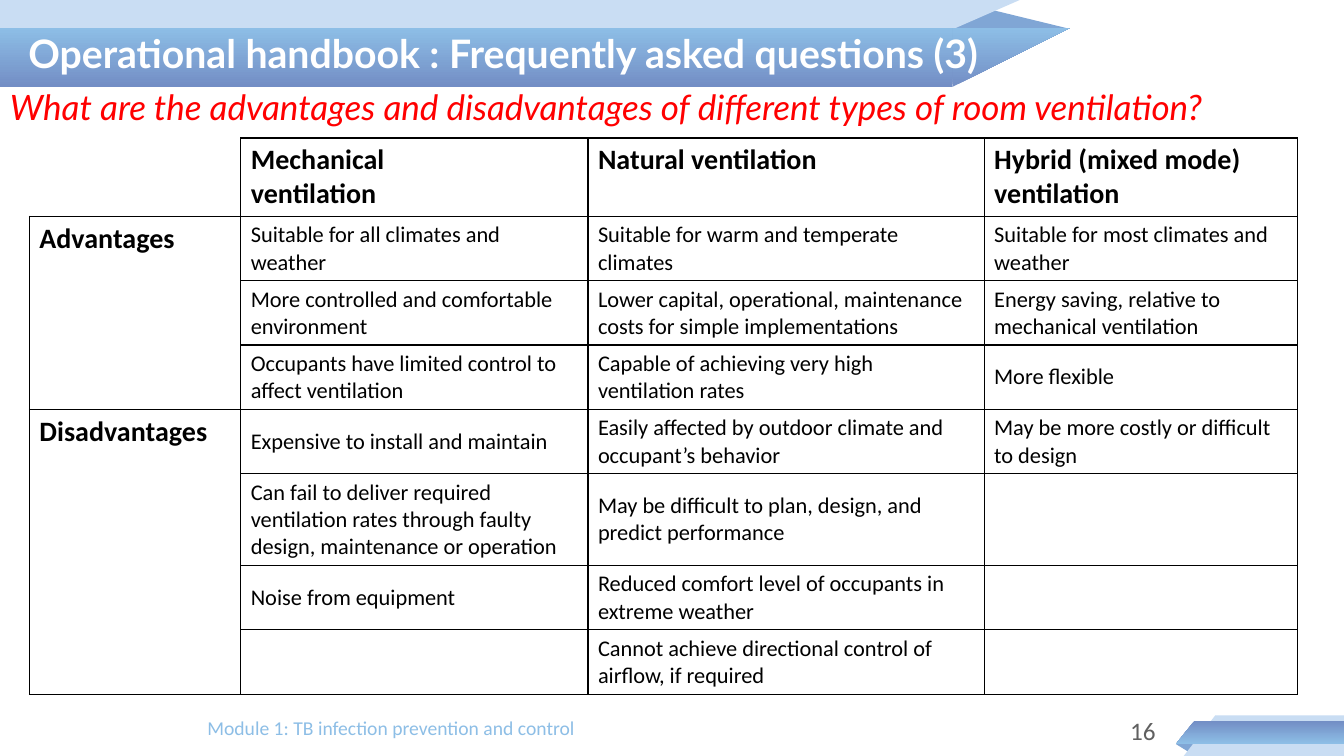
from dataclasses import dataclass

from pptx import Presentation
from pptx import util as u
from pptx.dml.color import RGBColor
from pptx.enum import shapes, text
from pptx.oxml import parse_xml
from pptx.oxml.ns import nsdecls

Pt = u.Pt
Preset = shapes.MSO_SHAPE
Anchor = text.MSO_ANCHOR
Align = text.PP_ALIGN


@dataclass(frozen=True)
class Theme:
    heading_font: str = "Lato"
    body_font: str = "Calibri"
    white: str = "FFFFFF"
    black: str = "000000"
    question: str = "FF0000"
    pale: str = "C9DDF3"
    fold: str = "80A6D5"
    band_dark: str = "738EC5"
    band_light: str = "8DBEE6"
    number: str = "606060"
    title_size: float = 28
    question_size: float = 25
    header_size: float = 20
    cell_size: float = 16
    footer_size: float = 14
    number_size: float = 18
    border: float = 1


class SlideBuilder:
    def __init__(self, slide, theme):
        self.slide = slide
        self.theme = theme

    def style(self, paragraph, size, color, family, bold=False, italic=False):
        font = paragraph.font
        font.name, font.size = family, Pt(size)
        font.bold, font.italic = bold, italic
        font.color.rgb = RGBColor.from_string(color)

    def title(self, wording, left, top, width, height):
        heading = self.slide.shapes.title
        self.slide.shapes._spTree.append(heading._element)
        heading.left, heading.top = Pt(left), Pt(top)
        heading.width, heading.height = Pt(width), Pt(height)
        frame = heading.text_frame
        frame.text = wording
        frame.vertical_anchor = Anchor.MIDDLE
        frame.paragraphs[0].alignment = Align.LEFT
        self.style(frame.paragraphs[0], self.theme.title_size,
                   self.theme.white, self.theme.heading_font, bold=True)

    def label(self, wording, left, top, width, height, size, color, family,
              align=Align.LEFT, italic=False):
        box = self.slide.shapes.add_textbox(Pt(left), Pt(top), Pt(width), Pt(height))
        frame = box.text_frame
        frame.word_wrap = True
        frame.text = wording
        frame.paragraphs[0].alignment = align
        self.style(frame.paragraphs[0], size, color, family, italic=italic)

    def ribbon(self, preset, left, top, width, height, color=None, turn=180, flip=None):
        piece = self.slide.shapes.add_shape(preset, Pt(left), Pt(top), Pt(width), Pt(height))
        piece.shadow.inherit = False
        piece.line.fill.background()
        piece.rotation = turn
        if flip:
            piece._element.spPr.xfrm.set(flip, "1")
        if preset == Preset.ISOSCELES_TRIANGLE:
            piece.adjustments[0] = 0.32
        if color:
            piece.fill.solid()
            piece.fill.fore_color.rgb = RGBColor.from_string(color)
            return
        piece.fill.gradient()
        piece.fill.gradient_angle = 270
        shades = (self.theme.band_dark, self.theme.band_light)
        for stop, shade in zip(piece.fill.gradient_stops, shades):
            stop.color.rgb = RGBColor.from_string(shade)

    def borders(self, cell, sides):
        properties = cell._tc.get_or_add_tcPr()
        for position, side in enumerate("LRTB"):
            paint = "<a:noFill/>"
            if side in sides:
                paint = f'<a:solidFill><a:srgbClr val="{self.theme.black}"/></a:solidFill>'
            properties.insert(position, parse_xml(
                f'<a:ln{side} {nsdecls("a")} w="{Pt(self.theme.border)}">{paint}</a:ln{side}>'))

    def table(self, rows, left, top, widths, heights, stub_sides):
        frame = self.slide.shapes.add_table(len(rows), len(widths), Pt(left), Pt(top),
                                            Pt(sum(widths)), Pt(sum(heights)))
        grid = frame.table
        grid.first_row = grid.horz_banding = False
        for column, width in zip(grid.columns, widths):
            column.width = Pt(width)
        for r, (row, height) in enumerate(zip(rows, heights)):
            grid.rows[r].height = Pt(height)
            for c, wording in enumerate(row):
                cell = grid.cell(r, c)
                heading = r == 0 or c == 0
                cell.text = wording
                cell.fill.solid()
                cell.fill.fore_color.rgb = RGBColor.from_string(self.theme.white)
                cell.vertical_anchor = Anchor.TOP if heading else Anchor.MIDDLE
                size = self.theme.header_size if heading else self.theme.cell_size
                self.style(cell.text_frame.paragraphs[0], size, self.theme.black,
                           self.theme.body_font, bold=heading)
                self.borders(cell, stub_sides[r] if c == 0 else "LRTB")


VENTILATION = [
    ("", "Mechanical\vventilation", "Natural ventilation", "Hybrid (mixed mode) ventilation"),
    ("Advantages", "Suitable for all climates and weather",
     "Suitable for warm and temperate climates", "Suitable for most climates and weather"),
    ("", "More controlled and comfortable environment",
     "Lower capital, operational, maintenance costs for simple implementations",
     "Energy saving, relative to mechanical ventilation"),
    ("", "Occupants have limited control to affect ventilation",
     "Capable of achieving very high ventilation rates", "More flexible"),
    ("Disadvantages", "Expensive to install and maintain",
     "Easily affected by outdoor climate and occupant’s behavior",
     "May be more costly or difficult to design"),
    ("", "Can fail to deliver required ventilation rates through faulty design, "
     "maintenance or operation",
     "May be difficult to plan, design, and predict performance", ""),
    ("", "Noise from equipment", "Reduced comfort level of occupants in extreme weather", ""),
    ("", "", "Cannot achieve directional control of airflow, if required", ""),
]


def main():
    deck = Presentation()
    deck.slide_width, deck.slide_height = Pt(960), Pt(540)
    theme = Theme()
    page = SlideBuilder(deck.slides.add_slide(deck.slide_layouts[5]), theme)

    fold, bar, tip = Preset.ISOSCELES_TRIANGLE, Preset.RECTANGLE, Preset.RIGHT_TRIANGLE
    page.ribbon(fold, 679, 6.5, 84.5, 14, theme.fold, turn=0)
    page.ribbon(bar, 0, -0.5, 586.5, 62.5, theme.pale, flip="flipH")
    page.ribbon(tip, 586.5, -0.5, 143, 62.5, theme.pale, flip="flipH")
    page.ribbon(bar, 0, 20, 680.5, 42, flip="flipH")
    page.ribbon(tip, 680.5, 20, 83.5, 42, flip="flipH")

    page.ribbon(fold, 840, 531.5, 13, 5.5, theme.fold)
    page.ribbon(bar, 868, 511, 92, 29, theme.pale, flip="flipV")
    page.ribbon(tip, 845.5, 511, 22.5, 29, theme.pale, flip="flipV")
    page.ribbon(bar, 853, 515, 107, 16.5, flip="flipV")
    page.ribbon(tip, 840, 515, 13, 16.5, flip="flipV")

    page.title("Operational handbook : Frequently asked questions (3)", 13, 14.5, 864, 47)
    page.label("Module 1: TB infection prevention and control", 141, 507.5, 577.5, 29,
               theme.footer_size, theme.band_light, theme.body_font)
    page.label("16", 729.5, 507.5, 103, 29, theme.number_size, theme.number,
               theme.body_font, align=Align.RIGHT)
    page.table(VENTILATION, 21, 98.5, widths=(151, 248, 283, 224),
               heights=(56, 46, 46, 46, 46, 65.5, 46, 46),
               stub_sides=("RB", "LTR", "LR", "LRB", "LTR", "LR", "LR", "LRB"))
    page.label("What are the advantages and disadvantages of different types of room ventilation?",
               0, 57.5, 913.5, 37.5, theme.question_size, theme.question,
               theme.heading_font, italic=True)
    deck.save("out.pptx")


if __name__ == "__main__":
    main()
